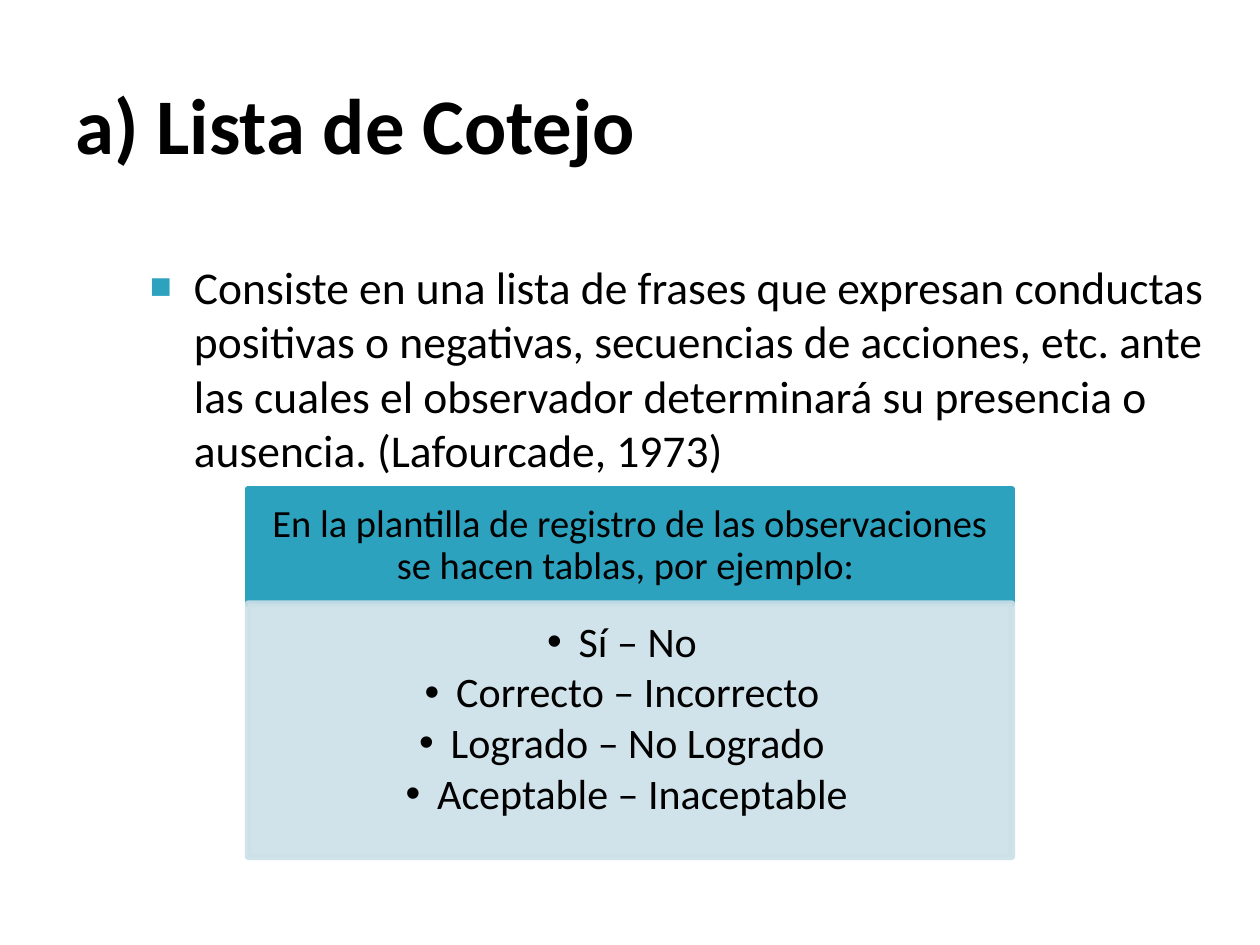
from lxml.etree import SubElement
from pptx import Presentation
from pptx.dml.color import RGBColor
from pptx.enum.shapes import MSO_SHAPE as Shape
from pptx.enum.text import MSO_ANCHOR as Anchor, MSO_AUTO_SIZE as AutoSize, PP_ALIGN as Align
from pptx.oxml.ns import qn
from pptx.util import Pt

COLORS = {"text": "000000", "accent": "2DA2BF", "pale": "CDE0E8"}
FONT = "Calibri"


def add_text(para, text, size, bold=False):
    span = para.add_run()
    span.text = text
    span.font.name = FONT
    span.font.size = Pt(size)
    span.font.bold = bold
    span.font.color.rgb = RGBColor.from_string(COLORS["text"])


def set_bullet(para, char, left, hanging, color=None, percent=100):
    props = para._p.get_or_add_pPr()
    props.set("marL", str(Pt(left)))
    props.set("indent", str(-Pt(hanging)))
    if color:
        SubElement(SubElement(props, qn("a:buClr")), qn("a:srgbClr"), val=color)
    SubElement(props, qn("a:buSzPct"), val=str(percent * 1000))
    SubElement(props, qn("a:buFont"), typeface="Arial")
    SubElement(props, qn("a:buChar"), char=char)


deck = Presentation()
deck.slide_width, deck.slide_height = Pt(720), Pt(540)
page = deck.slides.add_slide(deck.slide_layouts[1])
title, body = page.placeholders

# Title and definition: place, then insets (left, top, right, bottom)
placements = [
    (title, (36, 21, 648, 98.5), (7.2, 3.6, 3.6, 3.6), Anchor.MIDDLE),
    (body, (72, 105.8, 648, 408.2), (4.3, 42, 7.2, 3.6), Anchor.TOP),
]
for box, place, insets, anchor in placements:
    box.left, box.top, box.width, box.height = map(Pt, place)
    frame = box.text_frame
    frame.margin_left, frame.margin_top, frame.margin_right, frame.margin_bottom = map(Pt, insets)
    frame.vertical_anchor = anchor
    frame.auto_size = AutoSize.NONE
    frame.paragraphs[0].alignment = Align.LEFT
    frame.paragraphs[0].space_before = Pt(0)

add_text(title.text_frame.paragraphs[0], "a) Lista de Cotejo", 45, bold=True)
definition = body.text_frame.paragraphs[0]
set_bullet(definition, "■", 34.5, 25.2, COLORS["accent"], 80)
add_text(definition, "Consiste en una lista de frases que expresan conductas positivas o negativas, "
         "secuencias de acciones, etc. ante las cuales el observador determinará su presencia "
         "o ausencia. (Lafourcade, 1973)", 26)

# Two stacked panels: heading and examples
panels = [
    dict(top=279.4, height=65.5, color="accent", opacity=100, insets=(12.3, 7, 12.3, 7),
         anchor=Anchor.MIDDLE, size=22, after=0, bullet=None,
         lines=["En la plantilla de registro de las observaciones se hacen tablas, por ejemplo: "]),
    dict(top=344.9, height=144.7, color="pale", opacity=90, insets=(10, 10, 13.7, 15),
         anchor=Anchor.TOP, size=24, after=3, bullet="•",
         lines=["Sí – No ", "Correcto – Incorrecto ", "Logrado – No Logrado ",
                "Aceptable – Inaceptable"]),
]
for panel in panels:
    box = page.shapes.add_shape(Shape.RECTANGLE, Pt(141.8), Pt(panel["top"]),
                                Pt(436.4), Pt(panel["height"]))
    box.shadow.inherit = False
    box.line.width = Pt(3.78)
    for fill in (box.fill, box.line.fill):
        fill.solid()
        fill.fore_color.rgb = RGBColor.from_string(COLORS[panel["color"]])
    if panel["opacity"] < 100:
        for color in box._element.spPr.iter(qn("a:srgbClr")):
            SubElement(color, qn("a:alpha"), val=str(panel["opacity"] * 1000))
    SubElement(box.line._get_or_add_ln(), qn("a:round"))

    frame = box.text_frame
    frame.word_wrap = True
    frame.vertical_anchor = panel["anchor"]
    frame.margin_left, frame.margin_top, frame.margin_right, frame.margin_bottom = map(Pt, panel["insets"])
    for index, line in enumerate(panel["lines"]):
        para = frame.add_paragraph() if index else frame.paragraphs[0]
        para.alignment = Align.CENTER
        para.line_spacing = 0.9
        para.space_after = Pt(panel["after"])
        if panel["bullet"]:
            set_bullet(para, panel["bullet"], 18, 18)
        add_text(para, line, panel["size"])

deck.save("out.pptx")
